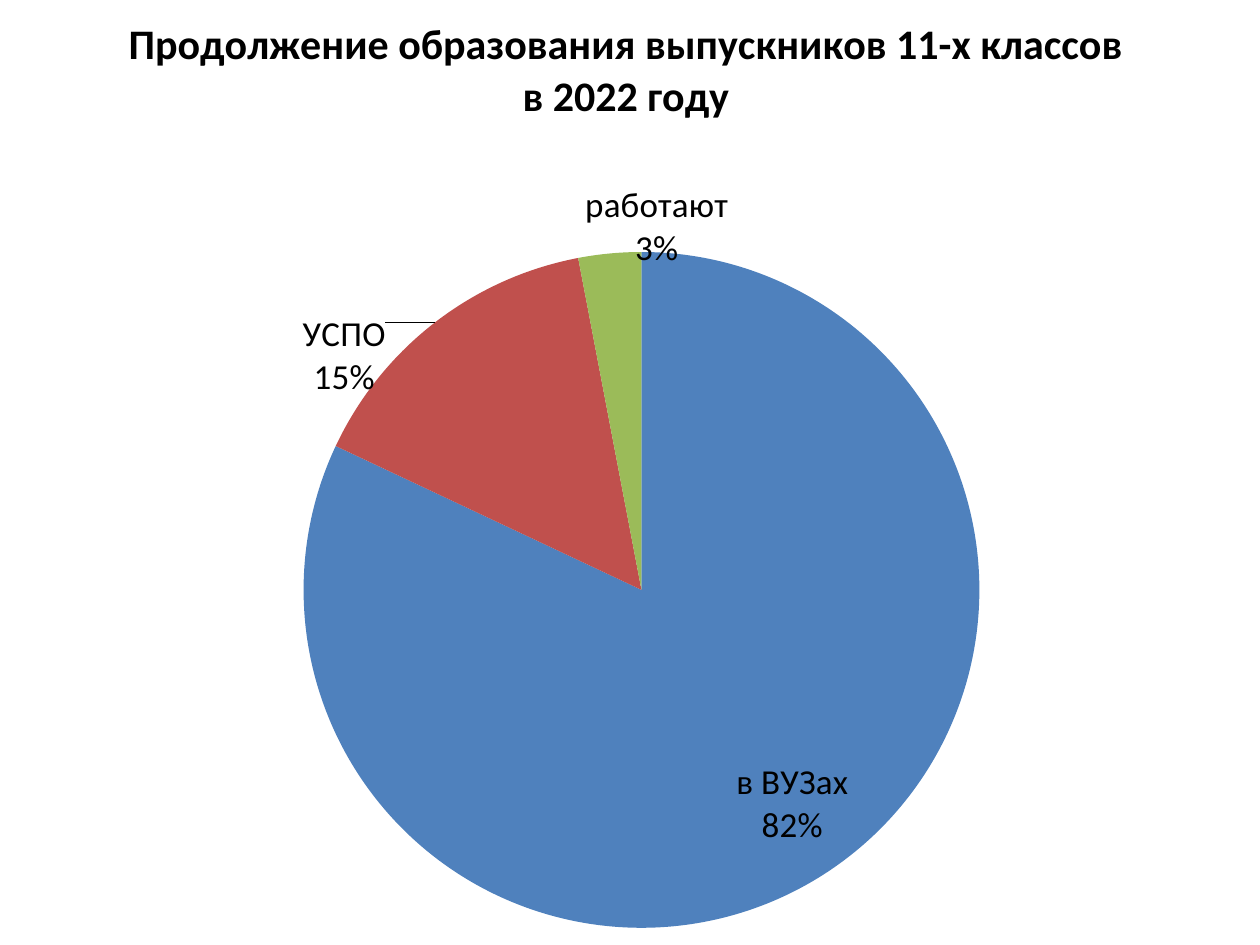
from pptx import Presentation
from pptx.chart.data import CategoryChartData
from pptx.dml.color import RGBColor
from pptx.enum.chart import XL_CHART_TYPE
from pptx.oxml import parse_xml
from pptx.oxml.ns import nsdecls, qn
from pptx.util import Pt

PX = 914400 // 126
BLACK = RGBColor(0x00, 0x00, 0x00)
BLUE = RGBColor(0x4F, 0x81, 0xBD)
RED = RGBColor(0xC0, 0x50, 0x4D)
GREEN = RGBColor(0x9B, 0xBB, 0x59)

TITLE_LINES = ["Продолжение образования выпускников 11-х классов", "в 2022 году"]
# category, percent, colour, label anchor, label shift in px
SLICES = [
    ("в ВУЗах", 82, BLUE, "ctr", (60, 71)),
    ("УСПО", 15, RED, "outEnd", (-44, 82)),
    ("работают", 3, GREEN, "outEnd", (119, 24)),
]


def format_font(font, size, bold=False):
    font.name = "Calibri"
    font.size = Pt(size)
    font.bold = bold
    font.color.rgb = BLACK


def manual_layout(**values):
    """Return a c:layout element with the given manual layout values."""
    parts = "".join(f'<c:{name} val="{value}"/>' for name, value in values.items())
    return parse_xml(f'<c:layout {nsdecls("c")}><c:manualLayout>{parts}'
                     '</c:manualLayout></c:layout>')


def replace_layout(element, position, layout):
    for old in element.findall(qn("c:layout")):
        element.remove(old)
    element.insert(position, layout)


def place_plot(chart, box, circle):
    """Set the pie's square, given in px relative to the chart box."""
    left, top, size = circle
    replace_layout(chart._chartSpace.chart.plotArea, 0, manual_layout(
        layoutTarget="inner", xMode="edge", yMode="edge",
        x=round(left / box[2], 3), y=round(top / box[3], 3),
        w=round(size / box[2], 3), h=round(size / box[3], 3)))


def add_title(chart, box, corner):
    """Write the title with its top left corner in px relative to the box."""
    chart.has_title = True
    title = chart.chart_title
    frame = title.text_frame
    for index, line in enumerate(TITLE_LINES):
        para = frame.add_paragraph() if index else frame.paragraphs[0]
        format_font(para.font, 24, bold=True)
        span = para.add_run()
        span.text = line
        format_font(span.font, 24, bold=True)
    title.include_in_layout = False
    replace_layout(title._element, 1, manual_layout(
        xMode="edge", yMode="edge",
        x=round(corner[0] / box[2], 3), y=round(corner[1] / box[3], 3)))


def slice_label(index, anchor, shift, box):
    label = parse_xml(
        f'<c:dLbl {nsdecls("c")}><c:idx val="{index}"/>'
        '<c:numFmt formatCode="0%" sourceLinked="0"/>'
        f'<c:dLblPos val="{anchor}"/><c:showLegendKey val="0"/>'
        '<c:showVal val="0"/><c:showCatName val="1"/><c:showSerName val="0"/>'
        '<c:showPercent val="1"/><c:showBubbleSize val="0"/>'
        '<c:separator>\n</c:separator></c:dLbl>')
    label.insert(1, manual_layout(x=round(shift[0] / box[2], 3),
                                  y=round(shift[1] / box[3], 3)))
    return label


def label_slices(series, box):
    labels = series.data_labels
    labels.show_value = False
    labels.show_category_name = True
    labels.show_percentage = True
    labels.number_format = "0%"
    labels.number_format_is_linked = False
    format_font(labels.font, 20)
    element = labels._element
    element.find(qn("c:showBubbleSize")).addnext(
        parse_xml(f'<c:separator {nsdecls("c")}>\n</c:separator>'))
    for index, (_, _, colour, anchor, shift) in enumerate(SLICES):
        fill = series.points[index].format.fill
        fill.solid()
        fill.fore_color.rgb = colour
        element.insert(index, slice_label(index, anchor, shift, box))


def add_pie(page, box):
    data = CategoryChartData()
    data.categories = [item[0] for item in SLICES]
    data.add_series("Series 1", [item[1] for item in SLICES])
    chart = page.shapes.add_chart(
        XL_CHART_TYPE.PIE, *(length * PX for length in box), data).chart
    format_font(chart.font, 20)
    chart.has_legend = False
    add_title(chart, box, (122, 13))
    plot = chart.plots[0]
    plot.vary_by_categories = True
    place_plot(chart, box, (301, 251, 676))
    label_slices(plot.series[0], box)


def main():
    deck = Presentation()
    deck.slide_width, deck.slide_height = 1260 * PX, 945 * PX
    page = deck.slides.add_slide(deck.slide_layouts[6])
    add_pie(page, (3, 1, 1257, 944))
    deck.save("out.pptx")


if __name__ == "__main__":
    main()
